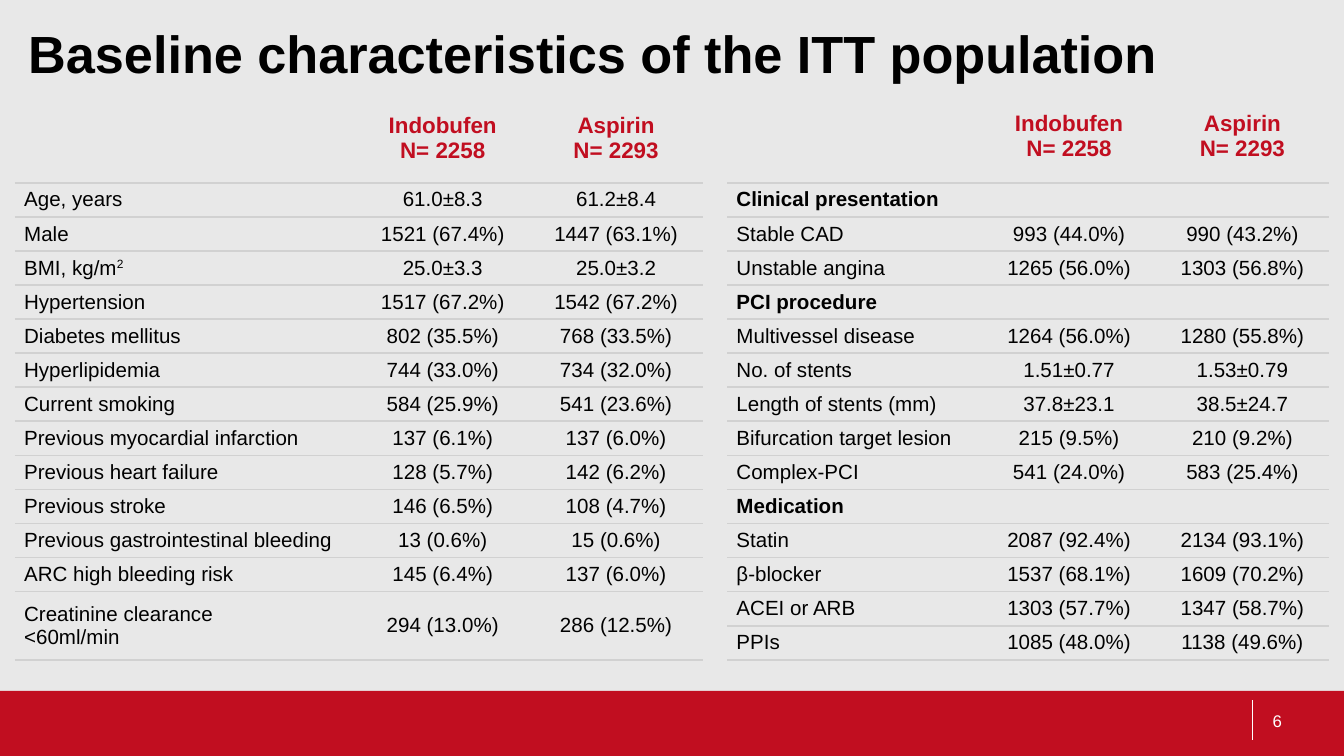
"""Build the baseline characteristics slide with its two comparison tables."""
from lxml.etree import SubElement
from pptx import Presentation
from pptx.dml.color import RGBColor as RGB
from pptx.enum.shapes import MSO_CONNECTOR as CONN, MSO_SHAPE as SHAPE
from pptx.enum.text import MSO_ANCHOR as ANCHOR, PP_ALIGN as ALIGN
from pptx.oxml.ns import qn
from pptx.util import Inches, Pt

THEME = {
    "font": "Arial",
    "bg": RGB(0xE8, 0xE8, 0xE8),
    "red": RGB(0xC1, 0x0E, 0x20),
    "black": RGB(0, 0, 0),
    "white": RGB(255, 255, 255),
    "rule": "D1D1D1",
    "title": Pt(28),
    "header": Pt(12),
    "body": Pt(11),
    "number": Pt(9),
}
BODY_TOP, BODY_BOTTOM, ROW_UNITS = 1.36, 4.91, 14
ROW_H = (BODY_BOTTOM - BODY_TOP) / ROW_UNITS
VALUE_W = 1.29
NO_STYLE = "{2D5ABB26-0587-4C30-8999-92F81FD0307C}"
HEADER = ("", "Indobufen\nN= 2258", "Aspirin\nN= 2293")

patients = [
    ("Age, years", "61.0±8.3", "61.2±8.4"),
    ("Male", "1521 (67.4%)", "1447 (63.1%)"),
    ("BMI, kg/m^2", "25.0±3.3", "25.0±3.2"),
    ("Hypertension", "1517 (67.2%)", "1542 (67.2%)"),
    ("Diabetes mellitus", "802 (35.5%)", "768 (33.5%)"),
    ("Hyperlipidemia", "744 (33.0%)", "734 (32.0%)"),
    ("Current smoking", "584 (25.9%)", "541 (23.6%)"),
    ("Previous myocardial infarction", "137 (6.1%)", "137 (6.0%)"),
    ("Previous heart failure", "128 (5.7%)", "142 (6.2%)"),
    ("Previous stroke", "146 (6.5%)", "108 (4.7%)"),
    ("Previous gastrointestinal bleeding", "13 (0.6%)", "15 (0.6%)"),
    ("ARC high bleeding risk", "145 (6.4%)", "137 (6.0%)"),
    ("Creatinine clearance\n<60ml/min", "294 (13.0%)", "286 (12.5%)"),
]
treatment = [
    ("Clinical presentation", "", ""),
    ("Stable CAD", "993 (44.0%)", "990 (43.2%)"),
    ("Unstable angina", "1265 (56.0%)", "1303 (56.8%)"),
    ("PCI procedure", "", ""),
    ("Multivessel disease", "1264 (56.0%)", "1280 (55.8%)"),
    ("No. of stents", "1.51±0.77", "1.53±0.79"),
    ("Length of stents (mm)", "37.8±23.1", "38.5±24.7"),
    ("Bifurcation target lesion", "215 (9.5%)", "210 (9.2%)"),
    ("Complex-PCI", "541 (24.0%)", "583 (25.4%)"),
    ("Medication", "", ""),
    ("Statin", "2087 (92.4%)", "2134 (93.1%)"),
    ("β-blocker", "1537 (68.1%)", "1609 (70.2%)"),
    ("ACEI or ARB", "1303 (57.7%)", "1347 (58.7%)"),
    ("PPIs", "1085 (48.0%)", "1138 (49.6%)"),
]
tables = [
    {"left": 0.11, "top": 0.69, "label_w": 2.54, "rows": patients},
    {"left": 5.41, "top": 0.67, "label_w": 1.9, "rows": treatment},
]


def add_text(p, text, size, color, bold=False):
    """Add runs to a paragraph; whatever follows ^ is superscript."""
    for i, part in enumerate(text.split("^")):
        r = p.add_run()
        r.text = part
        for name, value in {"name": THEME["font"], "size": size, "bold": bold}.items():
            setattr(r.font, name, value)
        r.font.color.rgb = color
        if i:
            r.font._element.set("baseline", "30000")


def add_rule(cell, side):
    """Draw a thin grey border on one side of a cell."""
    ln = SubElement(cell._tc.get_or_add_tcPr(), qn(f"a:{side}"), w=str(Pt(1)))
    SubElement(SubElement(ln, qn("a:solidFill")), qn("a:srgbClr"), val=THEME["rule"])


prs = Presentation()
prs.slide_width = Inches(10)
prs.slide_height = prs.slide_width * 9 // 16
s = prs.slides.add_slide(prs.slide_layouts[5])
s.background.fill.solid()
s.background.fill.fore_color.rgb = THEME["bg"]

title = s.shapes.title
box = {"left": 0.11, "top": 0.16, "width": 8.85, "height": 0.58}
for name, value in box.items():
    setattr(title, name, Inches(value))
tf = title.text_frame
for side, value in {"left": 0.1, "top": 0.05, "right": 0.1, "bottom": 0.05}.items():
    setattr(tf, f"margin_{side}", Inches(value))
tf.vertical_anchor = ANCHOR.TOP
p = tf.paragraphs[0]
p.alignment, p.line_spacing = ALIGN.LEFT, Pt(30)
add_text(p, "Baseline characteristics of the ITT population",
         THEME["title"], THEME["black"], True)

footer_top = Inches(5.14)
footer = s.shapes.add_shape(SHAPE.RECTANGLE, 0, footer_top, prs.slide_width,
                            prs.slide_height - footer_top)
footer.shadow.inherit = False
footer.fill.solid()
footer.fill.fore_color.rgb = THEME["red"]
footer.line.fill.background()

divider = s.shapes.add_connector(
    CONN.STRAIGHT, Inches(9.32), Inches(5.21), Inches(9.32), Inches(5.51))
divider.line.color.rgb = THEME["white"]
divider.line.width = Pt(0.5)
SubElement(divider._element.spPr, qn("a:effectLst"))

number = s.shapes.add_textbox(Inches(9.37), Inches(5.21), Inches(0.63), Inches(0.3))
tf = number.text_frame
tf.word_wrap, tf.vertical_anchor = True, ANCHOR.MIDDLE
add_text(tf.paragraphs[0], "6", THEME["number"], THEME["white"])

for group in tables:
    rows = [HEADER] + group["rows"]
    widths = [group["label_w"], VALUE_W, VALUE_W]
    top = group["top"]
    frame = s.shapes.add_table(
        len(rows), len(widths), Inches(group["left"]), Inches(top),
        Inches(sum(widths)), Inches(BODY_BOTTOM - top))
    table = frame.table
    table.first_row = table.horz_banding = False
    table._tbl.tblPr.find(qn("a:tableStyleId")).text = NO_STYLE
    for column, width in zip(table.columns, widths):
        column.width = Inches(width)
    for i, row in enumerate(rows):
        is_header = i == 0
        is_section = not any(row[1:])
        lines = row[0].count("\n") + 1
        table.rows[i].height = Inches(BODY_TOP - top if is_header else ROW_H * lines)
        size = THEME["header" if is_header else "body"]
        color = THEME["red" if is_header else "black"]
        for j, text in enumerate(row):
            cell = table.cell(i, j)
            cell.vertical_anchor = ANCHOR.MIDDLE
            if not is_header:
                cell.margin_left = cell.margin_right = Inches(0.07)
                cell.margin_top = cell.margin_bottom = 0
                add_rule(cell, "lnT")
            add_rule(cell, "lnB")
            cell.fill.background()
            tf = cell.text_frame
            for k, line in enumerate(text.split("\n")):
                p = tf.add_paragraph() if k else tf.paragraphs[0]
                p.alignment = ALIGN.CENTER if j else ALIGN.LEFT
                if line:
                    add_text(p, line, size, color, is_header or is_section)
                else:
                    SubElement(p._p, qn("a:endParaRPr"), sz=str(int(size.pt * 100)))

prs.save("out.pptx")
